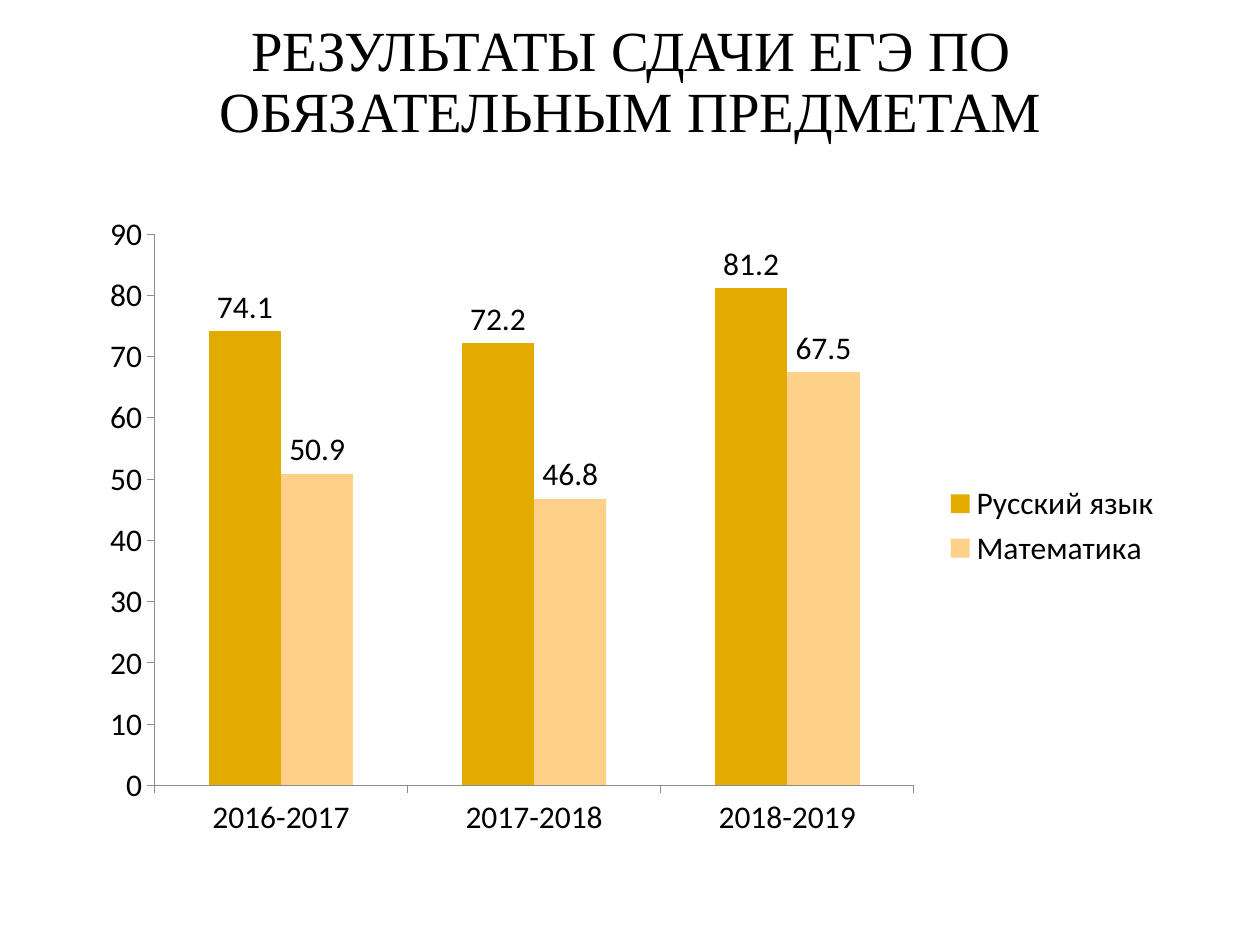
from dataclasses import dataclass

from lxml import etree
from pptx import Presentation
from pptx.chart.data import CategoryChartData
from pptx.dml.color import RGBColor
from pptx.enum.chart import XL_CHART_TYPE, XL_LABEL_POSITION, XL_LEGEND_POSITION, XL_TICK_MARK
from pptx.enum.text import MSO_ANCHOR, PP_ALIGN
from pptx.oxml.ns import qn
from pptx.util import Inches, Pt

COLUMN = XL_CHART_TYPE.COLUMN_CLUSTERED
OUTSIDE_END = XL_LABEL_POSITION.OUTSIDE_END
LEGEND_RIGHT = XL_LEGEND_POSITION.RIGHT
TICK_OUT, TICK_NONE = XL_TICK_MARK.OUTSIDE, XL_TICK_MARK.NONE
MIDDLE = MSO_ANCHOR.MIDDLE
CENTER = PP_ALIGN.CENTER


@dataclass(frozen=True)
class Theme:
    text: RGBColor = RGBColor(0x00, 0x00, 0x00)
    axis: RGBColor = RGBColor(0x8B, 0x8B, 0x8B)
    series: tuple = (RGBColor(0xE3, 0xAB, 0x00), RGBColor(0xFF, 0xD0, 0x87))
    title_font: str = "Times New Roman"
    chart_font: str = "Calibri"
    title_size: Pt = Pt(32.4)
    chart_size: Pt = Pt(18)


THEME = Theme()
TITLE = "РЕЗУЛЬТАТЫ СДАЧИ ЕГЭ ПО ОБЯЗАТЕЛЬНЫМ ПРЕДМЕТАМ"
YEARS = ["2016-2017", "2017-2018", "2018-2019"]
SCORES = {
    "Русский язык": [74.1, 72.2, 81.2],
    "Математика": [50.9, 46.8, 67.5],
}
PLOT_LAYOUT = {"x": 0.06, "y": 0.05, "w": 0.7, "h": 0.85}


def set_attributes(target, values):
    for name, value in values.items():
        setattr(target, name, value)


def format_font(font, name, size):
    set_attributes(font, {"name": name, "size": size, "bold": False})
    font.color.rgb = THEME.text


def add_title(slide, text):
    title = slide.shapes.title
    set_attributes(title, {"left": Inches(0.72), "top": Inches(0.13),
                           "width": Inches(8.57), "height": Inches(1.07)})
    tf = title.text_frame
    set_attributes(tf, {"text": text, "word_wrap": True, "vertical_anchor": MIDDLE})
    p = tf.paragraphs[0]
    set_attributes(p, {"alignment": CENTER, "line_spacing": 0.9})
    format_font(p.runs[0].font, THEME.title_font, THEME.title_size)


def format_axis(axis):
    set_attributes(axis, {"has_major_gridlines": False,
                          "major_tick_mark": TICK_OUT, "minor_tick_mark": TICK_NONE})
    axis.format.line.color.rgb = THEME.axis
    axis.format.line.width = Pt(0.5)
    format_font(axis.tick_labels.font, THEME.chart_font, THEME.chart_size)


def format_series(series, color):
    series.format.fill.solid()
    series.format.fill.fore_color.rgb = color
    labels = series.data_labels
    set_attributes(labels, {"show_value": True, "position": OUTSIDE_END})
    format_font(labels.font, THEME.chart_font, THEME.chart_size)


def place_plot_area(chart, fractions):
    """Fix the inner plot area as fractions of the chart frame."""
    area = chart.element.find(".//" + qn("c:plotArea"))
    layout = area.find(qn("c:layout"))
    if layout is None:
        layout = etree.Element(qn("c:layout"))
        area.insert(0, layout)
    manual = etree.SubElement(layout, qn("c:manualLayout"))
    settings = {"layoutTarget": "inner", "xMode": "edge", "yMode": "edge", **fractions}
    for tag, value in settings.items():
        etree.SubElement(manual, qn("c:" + tag)).set("val", str(value))


def add_score_chart(slide):
    data = CategoryChartData()
    data.categories = YEARS
    for name, values in SCORES.items():
        data.add_series(name, values)
    chart = slide.shapes.add_chart(COLUMN, Inches(0.71), Inches(1.6),
                                   Inches(8.61), Inches(5.15), data).chart
    set_attributes(chart, {"has_title": False, "has_legend": True})
    format_font(chart.font, THEME.chart_font, THEME.chart_size)
    set_attributes(chart.legend, {"position": LEGEND_RIGHT, "include_in_layout": False})
    format_font(chart.legend.font, THEME.chart_font, THEME.chart_size)

    plot = chart.plots[0]
    set_attributes(plot, {"gap_width": 150, "overlap": 0, "vary_by_categories": False})
    for series, color in zip(plot.series, THEME.series):
        format_series(series, color)

    for axis in (chart.category_axis, chart.value_axis):
        format_axis(axis)
    set_attributes(chart.value_axis, {"minimum_scale": 0, "maximum_scale": 90, "major_unit": 10})
    place_plot_area(chart, PLOT_LAYOUT)


def main():
    prs = Presentation()
    set_attributes(prs, {"slide_width": Inches(10), "slide_height": Inches(7.5)})
    slide = prs.slides.add_slide(prs.slide_layouts.get_by_name("Title Only"))
    add_title(slide, TITLE)
    add_score_chart(slide)
    prs.save("out.pptx")


if __name__ == "__main__":
    main()
